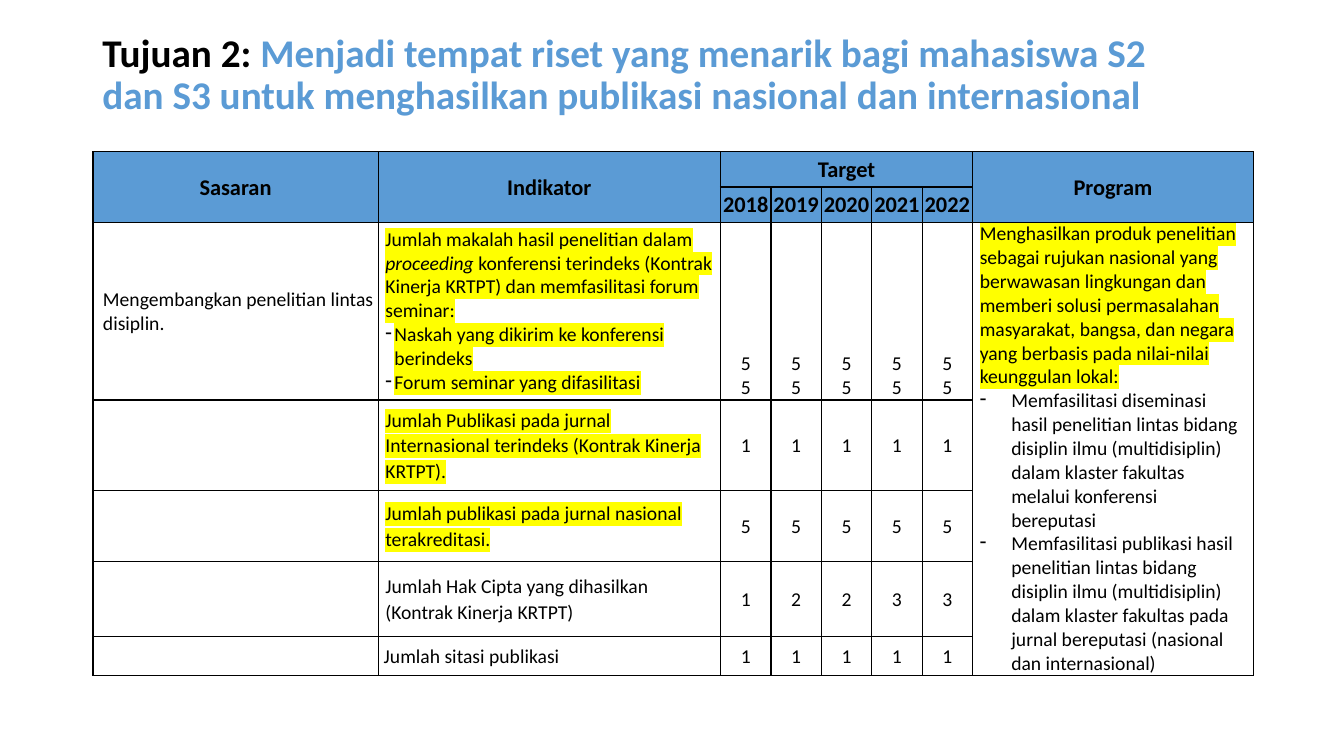
from lxml.etree import SubElement
from pptx import Presentation
from pptx.dml.color import RGBColor
from pptx.enum.text import MSO_ANCHOR, PP_ALIGN
from pptx.oxml.ns import qn
from pptx.util import Pt

BLACK = RGBColor(0x00, 0x00, 0x00)
WHITE = RGBColor(0xFF, 0xFF, 0xFF)
BLUE = RGBColor(0x5B, 0x9B, 0xD5)
YELLOW = RGBColor(0xFF, 0xFF, 0x00)

COLUMN_WIDTHS = [203.7, 244.6] + [36] * 5 + [200.7]
ROW_HEIGHTS = [25.2, 25.2, 127, 64.8, 50.4, 54, 27.5]
FIRST_YEAR, PROGRAM = 2, 7
YEARS = range(2018, 2023)
TIGHT = (0.7, 0.7, 0.7, 0)
PADDED = (5.2, 0, 5.2, 0)

# Indicator text, highlight, and yearly targets
INDICATORS = [
    ("Jumlah Publikasi pada jurnal Internasional terindeks (Kontrak Kinerja KRTPT).",
     YELLOW, [1, 1, 1, 1, 1]),
    ("Jumlah publikasi pada jurnal nasional terakreditasi.", YELLOW, [5, 5, 5, 5, 5]),
    ("Jumlah Hak Cipta yang dihasilkan (Kontrak Kinerja KRTPT)", None, [1, 2, 2, 3, 3]),
]
CITATION_TARGETS = [1, 1, 1, 1, 1]


def add_span(para, text, size=14, color=BLACK, bold=False, italic=False, highlight=None):
    span = para.add_run()
    span.text = text
    font = span.font
    font.size, font.bold, font.italic = Pt(size), bold, italic
    font.color.rgb = color
    if highlight is not None:
        mark = SubElement(span._r.get_or_add_rPr(), qn("a:highlight"))
        SubElement(mark, qn("a:srgbClr"), val=str(highlight))
    font.name = "Calibri"


def add_para(frame, text="", align=PP_ALIGN.LEFT, line_spacing=None, space_after=0,
             indent=0, bullet=None, **span_format):
    """Fill the empty first paragraph, or append one; indent hangs when there is a bullet."""
    first = frame.paragraphs[0]
    para = first if not first.runs else frame.add_paragraph()
    para.alignment = align
    para.space_after = Pt(space_after)
    if line_spacing:
        para.line_spacing = line_spacing
    properties = para._p.get_or_add_pPr()
    properties.set("marL", str(Pt(indent)))
    if bullet:
        properties.set("indent", str(-Pt(indent)))
        SubElement(properties, qn("a:buChar"), char=bullet)
    if text:
        add_span(para, text, **span_format)
    return para


class TargetSlide:
    def __init__(self, deck):
        self.page = deck.slides.add_slide(deck.slide_layouts[6])
        self.table = None

    def add_title(self, lead, goal):
        box = self.page.shapes.add_textbox(Pt(66), Pt(28.8), Pt(805), Pt(51))
        frame = box.text_frame
        frame.word_wrap = True
        frame.vertical_anchor = MSO_ANCHOR.MIDDLE
        para = add_para(frame, lead, line_spacing=0.9, size=28, bold=True)
        add_span(para, goal, size=28, bold=True, color=BLUE)

    def add_grid(self):
        self.table = self.page.shapes.add_table(
            len(ROW_HEIGHTS), len(COLUMN_WIDTHS), Pt(66.4), Pt(108.3),
            Pt(sum(COLUMN_WIDTHS)), Pt(sum(ROW_HEIGHTS))).table
        for column, width in zip(self.table.columns, COLUMN_WIDTHS):
            column.width = Pt(width)
        for row, height in zip(self.table.rows, ROW_HEIGHTS):
            row.height = Pt(height)
        for cell in self.table.iter_cells():
            self.style_cell(cell, WHITE)

    def style_cell(self, cell, fill):
        properties = cell._tc.get_or_add_tcPr()
        for side in ("lnL", "lnR", "lnT", "lnB"):
            line = SubElement(properties, qn(f"a:{side}"), w=str(Pt(1)))
            solid = SubElement(line, qn("a:solidFill"))
            SubElement(solid, qn("a:srgbClr"), val=str(BLACK))
        cell.fill.solid()
        cell.fill.fore_color.rgb = fill
        self.set_insets(cell, TIGHT)

    def set_insets(self, cell, insets):
        (cell.margin_left, cell.margin_top,
         cell.margin_right, cell.margin_bottom) = map(Pt, insets)

    def open_cell(self, row, column, insets=TIGHT, anchor=MSO_ANCHOR.MIDDLE, until=None):
        """Return the cell's text frame, first merging it up to the cell given by until."""
        cell = self.table.cell(row, column)
        if until:
            cell.merge(self.table.cell(*until))
        self.set_insets(cell, insets)
        cell.vertical_anchor = anchor
        return cell.text_frame

    def add_header(self, row, column, text, until=None):
        frame = self.open_cell(row, column, until=until)
        self.table.cell(row, column).fill.fore_color.rgb = BLUE
        add_para(frame, text, PP_ALIGN.CENTER, size=16, bold=True)

    def add_targets(self, row, values, lines=1, anchor=MSO_ANCHOR.MIDDLE):
        for column, value in enumerate(values, FIRST_YEAR):
            frame = self.open_cell(row, column, anchor=anchor)
            for _ in range(lines):
                add_para(frame, str(value), PP_ALIGN.CENTER)


def main():
    deck = Presentation()
    deck.slide_width, deck.slide_height = Pt(960), Pt(540)
    slide = TargetSlide(deck)
    slide.add_title("Tujuan 2: ", "Menjadi tempat riset yang menarik bagi mahasiswa S2 dan S3 "
                    "untuk menghasilkan publikasi nasional dan internasional")
    slide.add_grid()

    for column, heading in ((0, "Sasaran"), (1, "Indikator"), (PROGRAM, "Program")):
        slide.add_header(0, column, heading, until=(1, column))
    slide.add_header(0, FIRST_YEAR, "Target", until=(0, PROGRAM - 1))
    for column, year in enumerate(YEARS, FIRST_YEAR):
        slide.add_header(1, column, str(year))

    add_para(slide.open_cell(2, 0), "Mengembangkan penelitian lintas disiplin.", indent=6.5)

    papers = slide.open_cell(2, 1, PADDED)
    para = add_para(papers, "Jumlah makalah hasil penelitian dalam ", highlight=YELLOW)
    add_span(para, "proceeding", italic=True, highlight=YELLOW)
    add_span(para, " konferensi terindeks (Kontrak Kinerja KRTPT) dan memfasilitasi "
             "forum seminar:", highlight=YELLOW)
    for item in ("Naskah yang dikirim ke konferensi berindeks",
                 "Forum seminar yang difasilitasi"):
        add_para(papers, item, indent=6.5, bullet="-", highlight=YELLOW)
    slide.add_targets(2, [5] * len(YEARS), lines=2, anchor=MSO_ANCHOR.BOTTOM)

    for row, (text, highlight, targets) in enumerate(INDICATORS, 3):
        add_para(slide.open_cell(row, 1, PADDED), text, line_spacing=1.07, space_after=8,
                 highlight=highlight)
        slide.add_targets(row, targets)
    add_para(slide.open_cell(6, 1, (4, 0.7, 0.7, 0)), "Jumlah sitasi publikasi")
    slide.add_targets(6, CITATION_TARGETS)

    program = slide.open_cell(2, PROGRAM, PADDED, until=(6, PROGRAM))
    add_para(program, "Menghasilkan produk penelitian sebagai rujukan nasional yang "
             "berwawasan lingkungan dan memberi solusi permasalahan masyarakat, bangsa, dan "
             "negara yang berbasis pada nilai-nilai keunggulan lokal:", highlight=YELLOW)
    for item in ("Memfasilitasi diseminasi hasil penelitian lintas bidang disiplin ilmu "
                 "(multidisiplin) dalam klaster fakultas melalui konferensi bereputasi",
                 "Memfasilitasi publikasi hasil penelitian lintas bidang disiplin ilmu "
                 "(multidisiplin) dalam klaster fakultas pada jurnal bereputasi "
                 "(nasional dan internasional)"):
        add_para(program, item, indent=22.5, bullet="-")

    deck.save("out.pptx")


if __name__ == "__main__":
    main()
